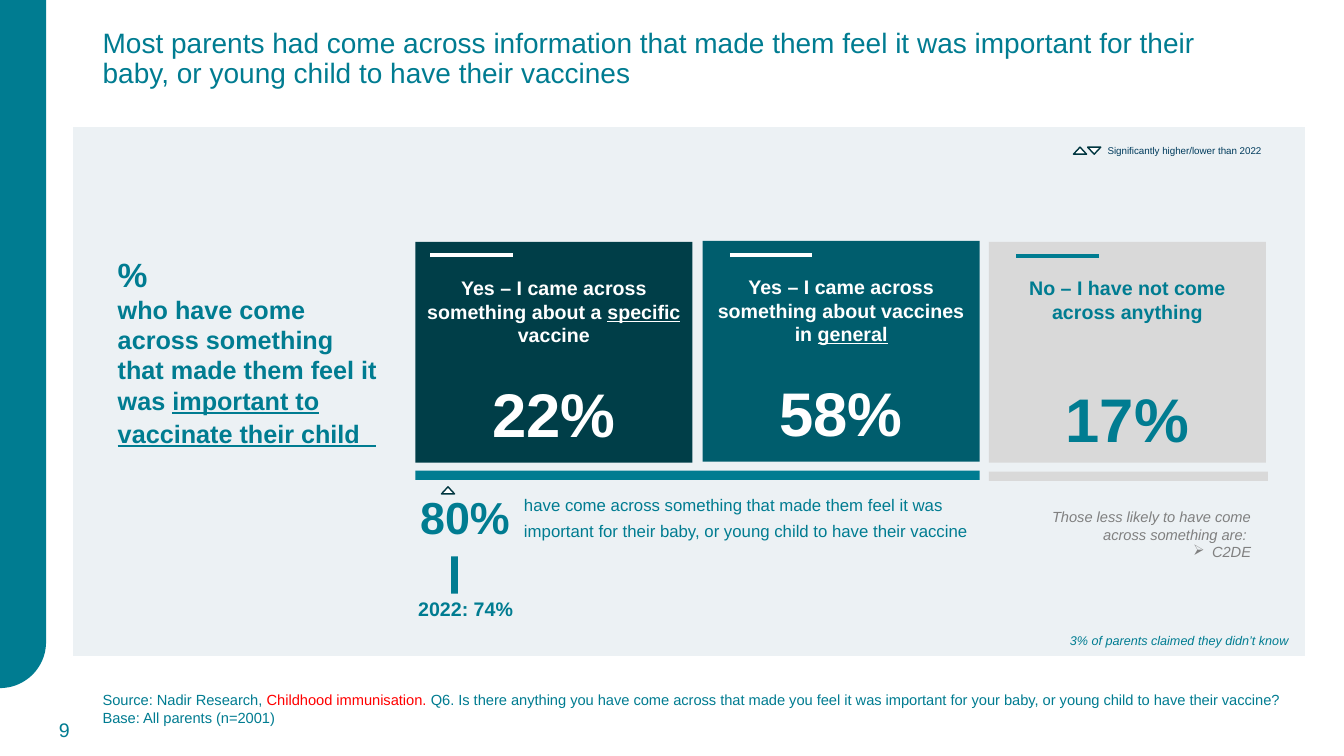
import math
from dataclasses import dataclass

from lxml import etree
from pptx import Presentation
from pptx.dml.color import RGBColor
from pptx.enum import shapes, text
from pptx.oxml import ns
from pptx.util import Pt

COLORS = {
    "teal": "007C91", "dark": "003E48", "mid": "005D6D", "grey": "D9D9D9",
    "panel": "ECF1F4", "white": "FFFFFF", "red": "FF0000", "note": "808080",
    "outline": "003640", "legend": "003B5C",
}
LEFT, CENTER, RIGHT = text.PP_ALIGN.LEFT, text.PP_ALIGN.CENTER, text.PP_ALIGN.RIGHT
TOP, MIDDLE = text.MSO_ANCHOR.TOP, text.MSO_ANCHOR.MIDDLE
RECT, TRIANGLE = shapes.MSO_SHAPE.RECTANGLE, shapes.MSO_SHAPE.ISOSCELES_TRIANGLE
Box = tuple[float, float, float, float]  # left, top, width, height


@dataclass
class Run:
    text: str
    size: float
    color: str = "teal"
    bold: bool = False
    italic: bool = False
    underline: bool = False


@dataclass
class Para:
    runs: list[Run]
    before: float = 0
    spacing: float = 1.0
    bullet: str = ""


@dataclass
class Label:
    box: Box
    paras: list[Para]
    align: text.PP_ALIGN = LEFT
    anchor: text.MSO_ANCHOR = TOP
    fill: str = ""
    top: float = 3.6
    bottom: float = 3.6


@dataclass
class Card:
    left: float
    top: float
    fill: str
    color: str
    answer: list[tuple[str, bool]]  # wording, underlined
    value: str
    gap: float
    accent: tuple[float, float]


def color(name: str) -> RGBColor:
    return RGBColor.from_string(COLORS[name])


def paint(sp, fill: str, line: str = "", width: float = 1) -> None:
    sp.shadow.inherit = False
    sp.fill.solid()
    sp.fill.fore_color.rgb = color(fill)
    if line:
        sp.line.color.rgb = color(line)
        sp.line.width = Pt(width)
    else:
        sp.line.fill.background()


def add_block(s, kind, box: Box, fill: str, line: str = "", width: float = 1):
    sp = s.shapes.add_shape(kind, *map(Pt, box))
    paint(sp, fill, line, width)
    return sp


def add_line(s, start: tuple[float, float], dx: float, dy: float, line: str, width: float) -> None:
    x, y = start
    cx = s.shapes.add_connector(shapes.MSO_CONNECTOR.STRAIGHT, Pt(x), Pt(y), Pt(x + dx), Pt(y + dy))
    cx.line.color.rgb = color(line)
    cx.line.width = Pt(width)
    etree.SubElement(cx.element.spPr, ns.qn("a:effectLst"))


def add_label(s, label: Label) -> None:
    if label.fill:
        sp = add_block(s, RECT, label.box, label.fill)
    else:
        sp = s.shapes.add_textbox(*map(Pt, label.box))
    tf = sp.text_frame
    tf.word_wrap = True
    tf.vertical_anchor = label.anchor
    tf.margin_top, tf.margin_bottom = Pt(label.top), Pt(label.bottom)
    for i, para in enumerate(label.paras):
        p = tf.add_paragraph() if i else tf.paragraphs[0]
        p.alignment = label.align
        p.line_spacing = para.spacing
        p.space_before = Pt(para.before)
        if para.bullet:
            pPr = p._p.get_or_add_pPr()
            pPr.set("marL", str(Pt(13.5)))
            pPr.set("indent", str(-Pt(13.5)))
            etree.SubElement(pPr, ns.qn("a:buChar")).set("char", para.bullet)
        for run in para.runs:
            r = p.add_run()
            r.text = run.text
            r.font.name = "Arial"
            r.font.size = Pt(run.size)
            r.font.color.rgb = color(run.color)
            r.font.bold, r.font.italic, r.font.underline = run.bold, run.italic, run.underline


def add_card(s, card: Card) -> None:
    answer = [Run(t, 14, card.color, bold=True, underline=u) for t, u in card.answer]
    value = [Run(card.value, 44, card.color, bold=True)]
    add_label(s, Label((card.left, card.top, 198, 157.68), [Para(answer), Para(value, before=card.gap)],
                       CENTER, fill=card.fill, top=24.3))
    add_line(s, card.accent, 59.04, 0, card.color, 3)


def add_side_band(s, width: float, height: float) -> None:
    """Band on the left edge with a rounded bottom-right corner."""
    angles = [math.radians(a) for a in range(0, 91, 3)]
    corner = [(Pt(width * math.cos(a)), Pt(height - width + width * math.sin(a))) for a in angles]
    builder = s.shapes.build_freeform(0, 0)
    builder.add_line_segments([(Pt(width), 0), *corner], close=True)
    paint(builder.convert_to_shape(), "teal", "teal")


CARDS = [
    Card(296.64, 172.8, "dark", "white",
         [("Yes – I came across something about a ", False), ("specific", True), (" vaccine", False)],
         "22%", 20.7, (307.44, 182.16)),
    Card(501.84, 172.08, "mid", "white",
         [("Yes – I came across something about vaccines in ", False), ("general", True)],
         "58%", 20.7, (521.28, 182.16)),
    Card(706.32, 172.8, "grey", "teal", [("No – I have not come across anything", False)],
         "17%", 41.4, (725.76, 182.88)),
]

FRAME_LABELS = [
    Label((66.24, 0.72, 828, 104.4), [Para([Run(
        "Most parents had come across information that made them feel it was important for their "
        "baby, or young child to have their vaccines", 20)], spacing=0.9)], anchor=MIDDLE, bottom=24.3),
    Label((66.24, 491.76, 876.24, 28.8), [
        Para([Run("Source: Nadir Research, ", 10.5), Run("Childhood immunisation. ", 10.5, "red"),
              Run("Q6. Is there anything you have come across that made you feel it was important "
                  "for your baby, or young child to have their vaccine?", 10.5)]),
        Para([Run("Base: All parents (n=2001)", 10.5)])], anchor=MIDDLE),
    Label((10.08, 506.88, 46.8, 28.8), [Para([Run("9", 14)])], RIGHT, MIDDLE),
]

PANEL_LABELS = [
    Label((77.04, 177.12, 204.48, 147.6), [
        Para([Run("%", 24, bold=True)]),
        Para([Run("who have come across something that made them feel it was ", 18, bold=True),
              Run("important to vaccinate their child", 18, bold=True, underline=True),
              Run("  ", 20, bold=True, underline=True)])], anchor=MIDDLE),
    Label((293.04, 346.32, 403.2, 51.12), [Para([Run("80%", 32, bold=True)])], fill="panel"),
    Label((291.6, 424.08, 132.48, 20.88), [Para([Run("2022: 74%", 14, bold=True)])],
          anchor=MIDDLE, fill="panel"),
    Label((367.2, 349.92, 332.64, 43.92), [Para([
        Run("have come across something that made them feel it was important for their baby, "
            "or young child to have their vaccine", 12), Run(" ", 16, bold=True)])]),
    Label((722.16, 344.88, 178.56, 73.44), [
        Para([Run("Those less likely to have come across something are: ", 10.5, "note", italic=True)]),
        Para([Run("C2DE", 10.5, "note", italic=True)], bullet="➢")], RIGHT, MIDDLE),
    Label((784.08, 100.08, 146.88, 15.84),
          [Para([Run("Significantly higher/lower than 2022", 7, "legend")])]),
    Label((747.36, 453.6, 180, 7.2),
          [Para([Run("3% of parents claimed they didn’t know", 9, italic=True)])], RIGHT, MIDDLE),
]

SIGNIFICANCE_MARKS = [(766.8, 105.12, 0), (776.88, 105.12, 180), (315.36, 347.76, 0)]


def main() -> None:
    prs = Presentation()
    prs.slide_width, prs.slide_height = Pt(960), Pt(540)
    s = prs.slides.add_slide(prs.slide_layouts[6])
    add_side_band(s, 32.4, 491)
    for label in FRAME_LABELS:
        add_label(s, label)
    add_block(s, RECT, (51.12, 90, 927.36 - 45.36, 379.44), "panel", "white", 1.5)
    for card in CARDS:
        add_card(s, card)
    add_block(s, RECT, (296.64, 336.24, 403.2, 6.48), "teal")
    add_block(s, RECT, (706.32, 336.96, 199.44, 6.48), "grey")
    add_line(s, (324.72, 396), 0, 33.84, "teal", 4.5)
    for label in PANEL_LABELS:
        add_label(s, label)
    for x, y, rotation in SIGNIFICANCE_MARKS:
        add_block(s, TRIANGLE, (x, y, 9.36, 5.04), "white", "outline").rotation = rotation
    prs.save("out.pptx")


if __name__ == "__main__":
    main()
